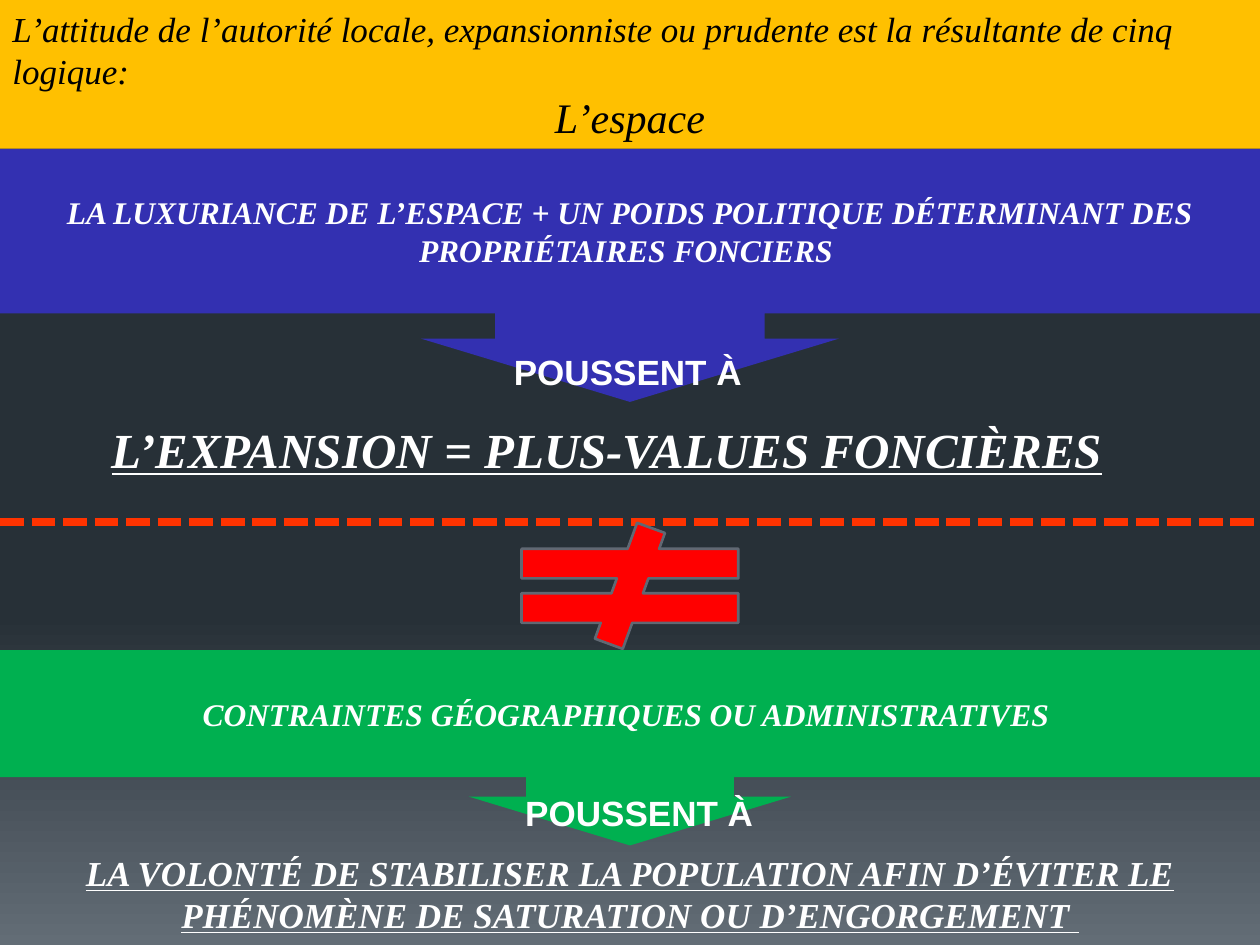
from copy import deepcopy

from pptx import Presentation
from pptx.dml.color import RGBColor
from pptx.enum.dml import MSO_LINE
from pptx.enum.shapes import MSO_CONNECTOR, MSO_SHAPE
from pptx.enum.text import MSO_ANCHOR, MSO_AUTO_SIZE, PP_ALIGN
from pptx.oxml.ns import qn
from pptx.oxml.xmlchemy import OxmlElement
from pptx.util import Inches, Pt

SERIF = "Times New Roman"
CALLOUT_ADJUSTMENTS = (1.064, 0.826, 0.25, 0.65)


def color(hex_value):
    """Turn a hex string into a colour."""
    return RGBColor.from_string(hex_value)


def paint_background(page, stops):
    """Fill the page with a vertical gradient of (position, colour) stops."""
    fill = page.background.fill
    fill.gradient()
    fill.gradient_angle = 270
    stop_list = page.element.find(".//" + qn("a:gsLst"))
    while len(stop_list) < len(stops):
        stop_list.append(deepcopy(stop_list[0]))
    for stop, (position, hex_value) in zip(fill.gradient_stops, stops):
        stop.position = position
        stop.color.rgb = color(hex_value)


def write(paragraph, text, size=20, font=SERIF, fill="FFFFFF", bold=True,
          italic=True, underline=None, align=PP_ALIGN.LEFT):
    """Write one formatted span into a paragraph."""
    paragraph.alignment = align
    span = paragraph.add_run()
    span.text = text
    span.font.size = Pt(size)
    span.font.name = font
    span.font.color.rgb = color(fill)
    span.font.bold = bold
    span.font.italic = italic
    span.font.underline = underline


def add_block(page, kind, left, top, width, height, fill, outline=None):
    """Add a flat preset shape with an optional outline."""
    block = page.shapes.add_shape(
        kind, Inches(left), Inches(top), Inches(width), Inches(height))
    block.shadow.inherit = False
    block.fill.solid()
    block.fill.fore_color.rgb = color(fill)
    if outline:
        block.line.color.rgb = color(outline)
        block.line.width = Pt(1.5)
    else:
        block.line.fill.background()
    block.text_frame.word_wrap = True
    block.text_frame.vertical_anchor = MSO_ANCHOR.MIDDLE
    return block


def add_callout(page, top, height, fill, text):
    """Add a full-width callout that points down."""
    callout = add_block(page, MSO_SHAPE.DOWN_ARROW_CALLOUT,
                        0, top, 10, height, fill)
    for index, value in enumerate(CALLOUT_ADJUSTMENTS):
        callout.adjustments[index] = value
    write(callout.text_frame.paragraphs[0], text, size=18,
          align=PP_ALIGN.CENTER)


def add_label(page, left, top, width, height, text, wrap=False, **style):
    """Add a text box holding one paragraph."""
    box = page.shapes.add_textbox(
        Inches(left), Inches(top), Inches(width), Inches(height))
    box.text_frame.word_wrap = wrap
    box.text_frame.auto_size = MSO_AUTO_SIZE.SHAPE_TO_FIT_TEXT
    write(box.text_frame.paragraphs[0], text, **style)


def add_divider(page, top):
    """Add a dashed line across the page."""
    divider = page.shapes.add_connector(
        MSO_CONNECTOR.STRAIGHT, 0, Inches(top), Inches(10), Inches(top))
    divider.line.color.rgb = color("FF3300")
    divider.line.width = Pt(4.5)
    divider.line.dash_style = MSO_LINE.SQUARE_DOT
    divider.element.spPr.append(OxmlElement("a:effectLst"))


def add_header(page):
    """Add the yellow title band."""
    header = add_block(page, MSO_SHAPE.RECTANGLE, 0, 0, 10, 1.18, "FFC000")
    frame = header.text_frame
    write(frame.paragraphs[0],
          "L’attitude de l’autorité locale, expansionniste ou prudente "
          "est la résultante de cinq logique:", fill="000000", bold=False)
    write(frame.add_paragraph(), "L’espace", size=24, fill="000000",
          bold=False, align=PP_ALIGN.CENTER)


def main():
    """Build and save the deck."""
    deck = Presentation()
    deck.slide_width, deck.slide_height = Inches(10), Inches(7.5)
    page = deck.slides.add_slide(deck.slide_layouts[6])
    paint_background(page, [(0, "242C33"), (0.65, "273037"), (1, "636D76")])

    add_callout(page, 1.18, 2.01, "3330B1",
                "LA LUXURIANCE DE L’ESPACE + UN POIDS POLITIQUE DÉTERMINANT "
                "DES PROPRIÉTAIRES FONCIERS ")
    add_callout(page, 5.16, 1.55, "00B050",
                "CONTRAINTES GÉOGRAPHIQUES OU ADMINISTRATIVES ")
    for left, top in ((3.98, 2.73), (4.07, 6.23)):
        add_label(page, left, top, 2.03, 0.44, "POUSSENT À",
                  font="Arial", italic=False)

    add_label(page, 0.79, 3.28, 8.43, 0.57,
              "L’EXPANSION = PLUS-VALUES FONCIÈRES", size=28, underline=True)
    add_divider(page, 4.14)
    add_block(page, MSO_SHAPE.MATH_NOT_EQUAL, 3.83, 4.15, 2.34, 1,
              "FF0000", outline="616873")
    add_label(page, 0, 6.71, 10, 0.77,
              "LA VOLONTÉ DE STABILISER LA POPULATION AFIN D’ÉVITER LE "
              "PHÉNOMÈNE DE SATURATION OU D’ENGORGEMENT ",
              wrap=True, underline=True, align=PP_ALIGN.CENTER)
    add_header(page)
    deck.save("out.pptx")


if __name__ == "__main__":
    main()
